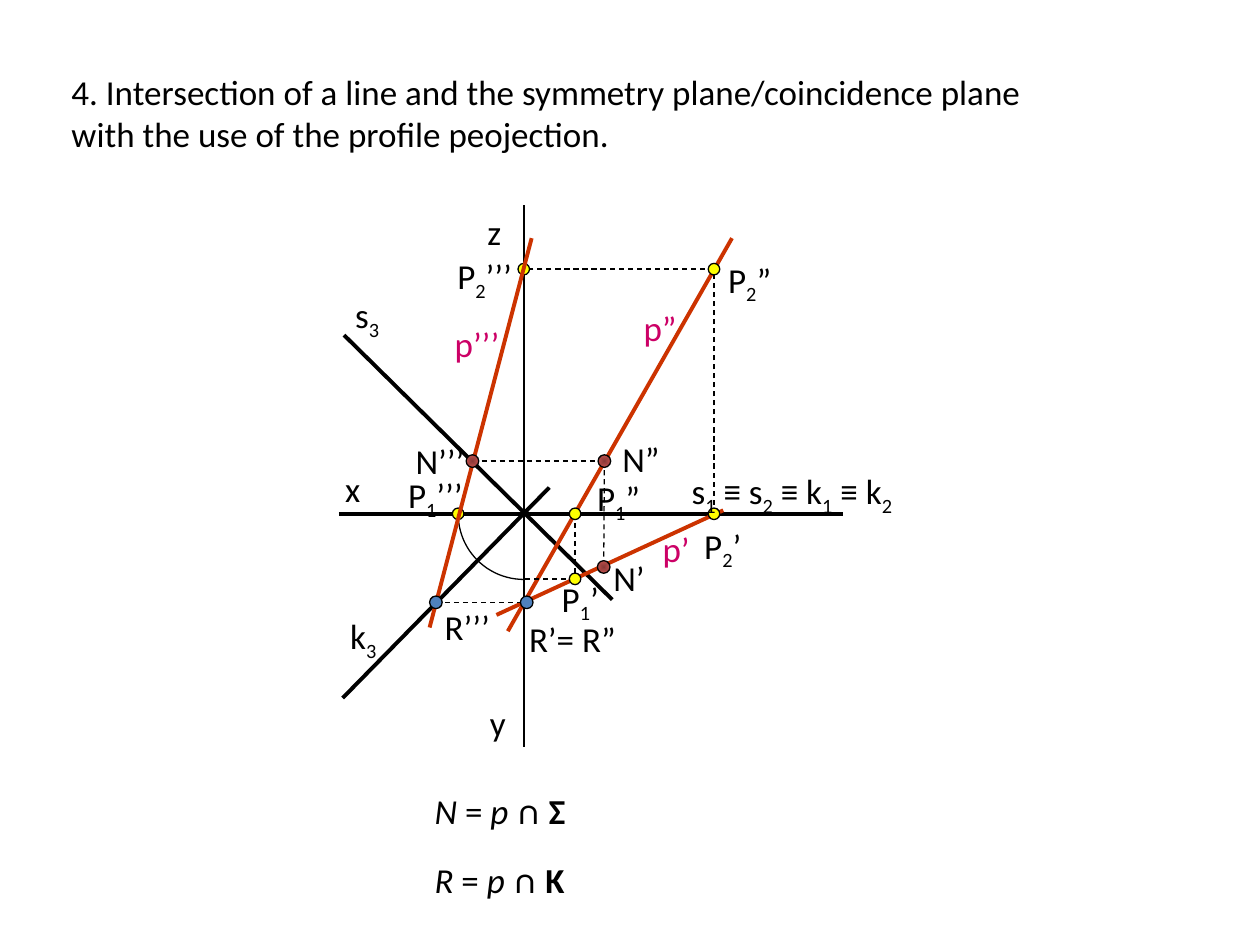
from dataclasses import dataclass
from math import cos, pi, sin

from lxml.etree import SubElement
from pptx import Presentation
from pptx.dml.color import RGBColor
from pptx.enum.dml import MSO_LINE
from pptx.enum.shapes import MSO_CONNECTOR, MSO_SHAPE
from pptx.enum.text import MSO_ANCHOR, MSO_AUTO_SIZE
from pptx.oxml.ns import qn
from pptx.util import Pt

COLORS = {
    "ink": "000000", "line": "CC3300", "line_label": "CC0066",
    "trace": "FFFF00", "coincidence": "4F81BD",
    "symmetry_center": "893937", "symmetry_edge": "C0504D",
}
AXIS_X, AXIS_Y = 299.3, 293.6
LABEL_HEIGHT = 31.7


@dataclass(frozen=True)
class Run:
    text: str
    size: float = 20
    italic: bool = False
    bold: bool = False
    subscript: bool = False


@dataclass(frozen=True)
class Stroke:
    start: tuple[float, float]
    end: tuple[float, float]
    color: str = "ink"
    width: float = 2.25
    dashed: bool = False


@dataclass(frozen=True)
class Dot:
    x: float
    y: float
    color: str
    size: float = 7.2


@dataclass(frozen=True)
class Label:
    text: str
    left: float
    top: float
    width: float
    color: str = "ink"


DOTS = {
    "P1'": Dot(328.6, 330.8, "trace", 6.6),
    "P1''": Dot(328.6, AXIS_Y, "trace", 6.6),
    "P1'''": Dot(261.8, AXIS_Y, "trace", 6.6),
    "P2'": Dot(408, AXIS_Y, "trace", 6.6),
    "P2''": Dot(408, 153.8, "trace", 6.6),
    "P2'''": Dot(AXIS_X, 153.8, "trace", 6.6),
    "N'": Dot(345, 324, "symmetry_center"),
    "N''": Dot(345.4, 263.5, "symmetry_center"),
    "N'''": Dot(270, 263.5, "symmetry_center"),
    "R'": Dot(301, 344.2, "coincidence"),
    "R'''": Dot(249.1, 344.2, "coincidence"),
}
PROJECTIONS = [
    ("P1''", "P1'"), ("P2'", "P2''"), ("P2''", "P2'''"),
    ("N'''", "N''"), ("N''", "N'"), ("R'''", "R'"),
]
STROKES = [
    Stroke((193.7, AXIS_Y), (481.7, AXIS_Y)),
    Stroke((AXIS_X, 117.4), (AXIS_X, 427), width=1),
    Stroke((196.6, 191.5), (349.9, 342.7)),
    Stroke((195.8, 398.9), (313.9, 278.6)),
    Stroke((290.2, 360.7), (418.3, 136.1), "line"),
    Stroke((283.7, 351.4), (413.3, 291.6), "line"),
]
PROFILE_LINE = Stroke((303.8, 136.1), (245.5, 358.6), "line")
# An underscore lowers the character that follows it.
LABELS = [
    Label("s_1 ≡ s_2 ≡ k_1 ≡ k_2", 388.1, 265, 169.2),
    Label("x", 190.1, 263.5, 34.6),
    Label("z", 271.4, 116.6, 41.8),
    Label("y", 272.9, 397.4, 31),
    Label("s_3", 195.8, 164.2, 49.7),
    Label("k_3", 193, 347.8, 36),
    Label("p”", 360.7, 171.4, 43.2, "line_label"),
    Label("p’", 371.5, 298.1, 36.7, "line_label"),
    Label("p’’’", 252.7, 180.7, 51.1, "line_label"),
    Label("P_1’", 313.9, 326.2, 38.2),
    Label("P_1”", 334.1, 268.6, 40.3),
    Label("P_1’’’", 226.1, 267.1, 55.4),
    Label("P_2’", 395.3, 295.9, 49),
    Label("P_2”", 409, 144, 40.3),
    Label("P_2’’’", 254.2, 141.8, 49.7),
    Label("N’", 343.4, 314.6, 41.8),
    Label("N”", 348.5, 246.2, 46.8),
    Label("N’’’", 230.4, 247.7, 47.5),
    Label("R’’’", 247, 342.7, 56.2),
    Label("R’= R”", 295.2, 349.2, 68.4),
]
TITLE = ("4. Intersection of a line and the symmetry plane/coincidence plane "
         "with the use of the profile peojection.")


def rgb(name: str) -> RGBColor:
    return RGBColor.from_string(COLORS[name])


def label_runs(text: str) -> list[Run]:
    """Split a label into runs, lowering each character after an underscore."""
    first, *rest = text.split("_")
    runs = [Run(first)]
    for part in rest:
        runs += [Run(part[0], subscript=True), Run(part[1:])]
    return [run for run in runs if run.text]


def add_text(slide, runs: list[Run], *, left: float, top: float, width: float,
             height: float = LABEL_HEIGHT, color: str = "ink",
             anchor: MSO_ANCHOR = MSO_ANCHOR.TOP,
             auto_size: MSO_AUTO_SIZE = MSO_AUTO_SIZE.SHAPE_TO_FIT_TEXT) -> None:
    shape = slide.shapes.add_textbox(Pt(left), Pt(top), Pt(width), Pt(height))
    frame = shape.text_frame
    frame.word_wrap = True
    frame.auto_size = auto_size
    frame.vertical_anchor = anchor
    for item in runs:
        run = frame.paragraphs[0].add_run()
        run.text = item.text
        font = run.font
        font.name, font.size = "Calibri", Pt(item.size)
        font.italic, font.bold = item.italic, item.bold
        font.color.rgb = rgb(color)
        if item.subscript:
            run._r.get_or_add_rPr().set("baseline", "-25000")


def add_stroke(slide, stroke: Stroke) -> None:
    connector = slide.shapes.add_connector(
        MSO_CONNECTOR.STRAIGHT, *map(Pt, stroke.start + stroke.end))
    connector.line.color.rgb = rgb(stroke.color)
    connector.line.width = Pt(stroke.width)
    if stroke.dashed:
        connector.line.dash_style = MSO_LINE.DASH
    SubElement(connector._element.spPr, qn("a:effectLst"))


def fill_from_center(shape, center: str, edge: str) -> None:
    shape.fill.gradient()
    for stop, name in zip(shape.fill.gradient_stops, (center, edge)):
        stop.color.rgb = rgb(name)
    gradient = shape._element.spPr.find(qn("a:gradFill"))
    gradient.remove(gradient.find(qn("a:lin")))
    shade = SubElement(gradient, qn("a:path"), {"path": "shape"})
    SubElement(shade, qn("a:fillToRect"), dict.fromkeys("ltrb", "50000"))


def add_dot(slide, dot: Dot) -> None:
    shape = slide.shapes.add_shape(
        MSO_SHAPE.OVAL, Pt(dot.x - dot.size / 2), Pt(dot.y - dot.size / 2),
        Pt(dot.size), Pt(dot.size))
    shape.shadow.inherit = False
    if dot.color == "symmetry_center":
        fill_from_center(shape, "symmetry_center", "symmetry_edge")
    else:
        shape.fill.solid()
        shape.fill.fore_color.rgb = rgb(dot.color)
    shape.line.color.rgb = rgb("ink")
    shape.line.width = Pt(0.75)


def add_quarter_arc(slide, radius: float, steps: int = 24) -> None:
    """Draw the arc that turns the y axis onto the x axis."""
    angles = [pi / 2 * (1 + step / steps) for step in range(steps + 1)]
    points = [(Pt(AXIS_X + radius * cos(angle)), Pt(AXIS_Y + radius * sin(angle)))
              for angle in angles]
    builder = slide.shapes.build_freeform(*points[0])
    builder.add_line_segments(points[1:], close=False)
    arc = builder.convert_to_shape()
    arc.shadow.inherit = False
    arc.fill.background()
    arc.line.color.rgb = rgb("ink")
    arc.line.width = Pt(0.75)


def main() -> None:
    presentation = Presentation()
    presentation.slide_width, presentation.slide_height = Pt(720), Pt(540)
    slide = presentation.slides.add_slide(presentation.slide_layouts[6])

    add_text(slide, [Run(TITLE)], left=33.8, top=28.1, width=585.4, height=72.7,
             anchor=MSO_ANCHOR.MIDDLE, auto_size=MSO_AUTO_SIZE.NONE)
    for stroke in STROKES:
        add_stroke(slide, stroke)
    ends = [(DOTS[start], DOTS[end]) for start, end in PROJECTIONS]
    ends.append((DOTS["P1'"], Dot(AXIS_X, DOTS["P1'"].y, "ink")))
    for start, end in ends:
        add_stroke(slide, Stroke((start.x, start.y), (end.x, end.y),
                                 width=0.75, dashed=True))
    add_quarter_arc(slide, AXIS_X - DOTS["P1'''"].x)
    for dot in (dot for dot in DOTS.values() if dot.color == "trace"):
        add_dot(slide, dot)
    add_stroke(slide, PROFILE_LINE)
    for dot in (dot for dot in DOTS.values() if dot.color != "trace"):
        add_dot(slide, dot)
    for label in LABELS:
        add_text(slide, label_runs(label.text), left=label.left, top=label.top,
                 width=label.width, color=label.color)
    for point, plane, top in (("N", "Σ", 443.5), ("R", "K", 483.1)):
        runs = [Run(point, italic=True), Run(" = "), Run("p ", italic=True),
                Run(f"∩ {plane}", bold=True), Run(" ", size=24, bold=True)]
        add_text(slide, runs, left=241.2, top=top, width=107, height=36)
    presentation.save("out.pptx")


if __name__ == "__main__":
    main()
